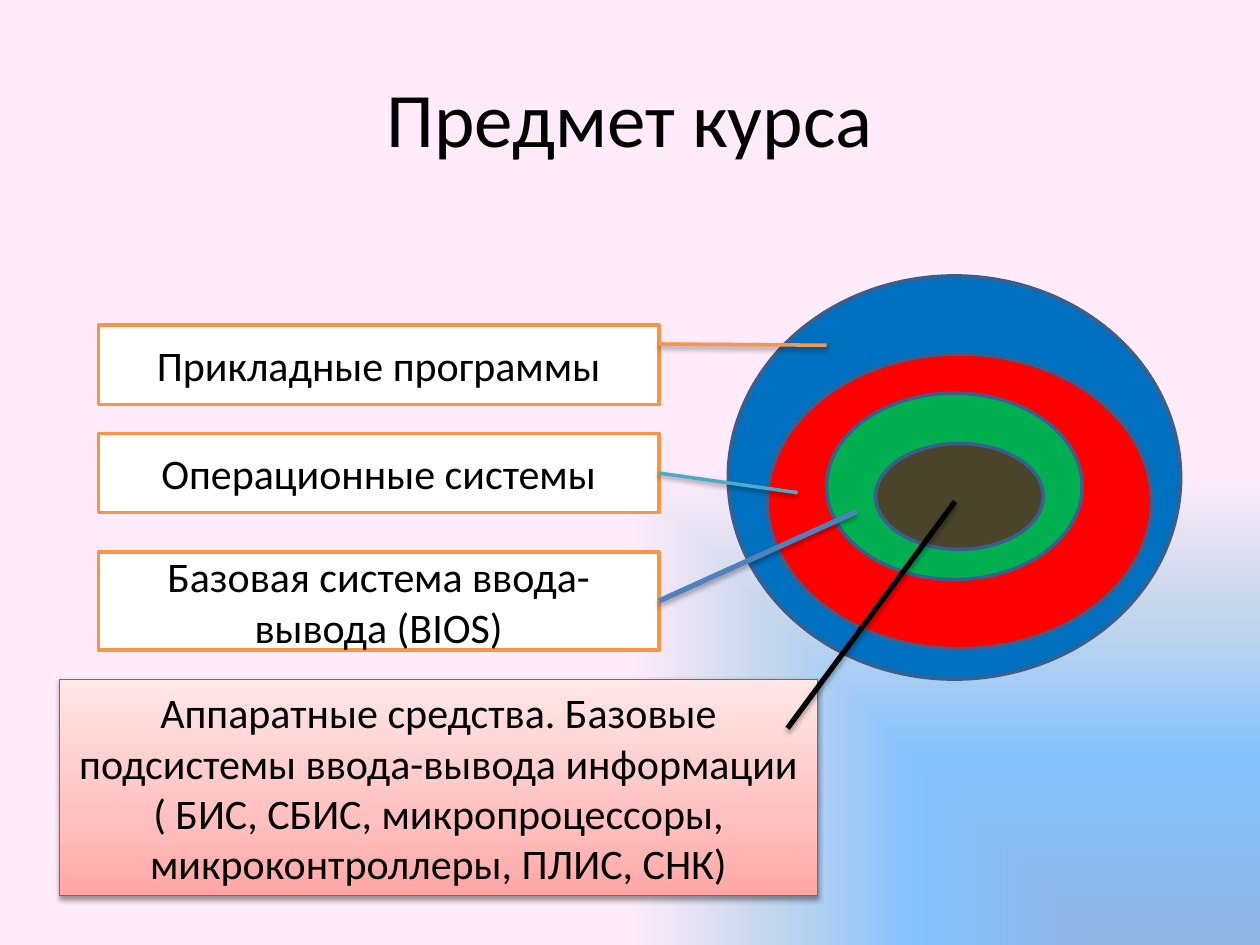
from lxml.etree import SubElement
from pptx import Presentation
from pptx.dml.color import RGBColor
from pptx.enum.shapes import MSO_CONNECTOR, MSO_SHAPE
from pptx.enum.text import MSO_ANCHOR, PP_ALIGN
from pptx.oxml.ns import qn
from pptx.util import Inches, Pt

COLORS = {
    "text": "000000", "white": "FFFFFF", "outline": "3A5F8C",
    "blue": "0070C0", "red": "FF0000", "green": "00B050", "brown": "4A452A",
    "orange": "F79646", "teal": "4BACC6", "steel": "4F81BD",
    "hardware": "BF4C48", "shadow": "000000",
}
BACKGROUND_STOPS = [(1, "8EB4E3", 34), (40, "85C2FF", 100),
                    (70, "C4D6EB", 100), (100, "FFEBFA", 100)]
HARDWARE_STOPS = [(0, "FFA6A5", 100), (35, "FFC0BF", 100), (100, "FFE7E7", 100)]


def rgb(name):
    return RGBColor.from_string(COLORS[name])


def add_color(parent, value, alpha):
    clr = SubElement(parent, qn("a:srgbClr"), val=value)
    if alpha < 100:
        SubElement(clr, qn("a:alpha"), val=str(alpha * 1000))


def set_gradient(fill, element, stops):
    fill.gradient()
    grad = element.find(".//" + qn("a:gradFill"))
    for child in list(grad):
        grad.remove(child)
    gs_list = SubElement(grad, qn("a:gsLst"))
    for pos, value, alpha in stops:
        gs = SubElement(gs_list, qn("a:gs"), pos=str(pos * 1000))
        add_color(gs, value, alpha)
    return grad


def add_shadow(effects, alpha, dist):
    shadow = SubElement(effects, qn("a:outerShdw"), blurRad=str(Pt(3.1)),
                        dist=str(Pt(dist)), dir="5400000", rotWithShape="0")
    add_color(shadow, COLORS["shadow"], alpha)


def add_text(sp, text, size):
    tf = sp.text_frame
    tf.word_wrap = True
    tf.vertical_anchor = MSO_ANCHOR.MIDDLE
    p = tf.paragraphs[0]
    p.alignment = PP_ALIGN.CENTER
    r = p.add_run()
    r.text = text
    r.font.name = "Calibri"
    r.font.size = Pt(size)
    r.font.color.rgb = rgb("text")


def add_shape(s, kind, box, fill, line, width=2):
    sp = s.shapes.add_shape(kind, *map(Inches, box))
    sp.shadow.inherit = False
    sp.fill.solid()
    sp.fill.fore_color.rgb = rgb(fill)
    sp.line.color.rgb = rgb(line)
    sp.line.width = Pt(width)
    return sp


def add_background(s):
    grad = set_gradient(s.background.fill, s.element, BACKGROUND_STOPS)
    path = SubElement(grad, qn("a:path"), path="rect")
    SubElement(path, qn("a:fillToRect"), l="100000", t="100000")


def add_title(s, box):
    add_text(s.shapes.add_textbox(*map(Inches, box)), "Предмет курса", 44)


def add_rings(s, box):
    left, top, width, height = box
    rings = [
        (0, 0, width, height, "blue"),
        (0.31, 0.62, 3.05, 2.34, "red"),
        (0.78, 0.93, 2.03, 1.48, "green"),
        (1.17, 1.33, 1.33, 0.84, "brown"),
    ]
    for dx, dy, w, h, fill in rings:
        add_shape(s, MSO_SHAPE.OVAL, (left + dx, top + dy, w, h), fill, "outline")


def add_layers(s, box):
    left, top, width, _ = box
    layers = [
        (0, 0.63, "Прикладные программы"),
        (0.86, 0.63, "Операционные системы"),
        (1.8, 0.78, "Базовая система ввода-вывода (BIOS)"),
    ]
    labels = []
    for dy, height, text in layers:
        sp = add_shape(s, MSO_SHAPE.RECTANGLE, (left, top + dy, width, height),
                       "white", "orange")
        add_text(sp, text, 24)
        labels.append(sp)
    return labels


def add_hardware(s, box):
    sp = add_shape(s, MSO_SHAPE.RECTANGLE, box, "white", "hardware", 0.75)
    grad = set_gradient(sp.fill, sp.element.spPr, HARDWARE_STOPS)
    SubElement(grad, qn("a:lin"), ang="16200000", scaled="1")
    add_shadow(sp.element.spPr.find(qn("a:effectLst")), 38, 1.6)
    add_text(sp, "Аппаратные средства. Базовые подсистемы ввода-вывода информации "
                 "( БИС, СБИС, микропроцессоры, микроконтроллеры, ПЛИС, СНК)", 24)


def add_pointers(s, labels):
    _, systems, bios = labels
    pointers = [
        (5.23, 2.73, 6.56, 2.74, "orange", 2, None),
        (5.23, 3.75, 6.33, 3.91, "teal", 2, systems),
        (5.23, 4.77, 6.8, 4.06, "steel", 3, bios),
        (6.25, 5.78, 7.58, 3.98, "text", 3, None),
    ]
    for x1, y1, x2, y2, color, width, label in pointers:
        cn = s.shapes.add_connector(MSO_CONNECTOR.STRAIGHT,
                                    *map(Inches, (x1, y1, x2, y2)))
        if label is not None:
            cn.begin_connect(label, 3)
        cn.line.color.rgb = rgb(color)
        cn.line.width = Pt(width)
        effects = SubElement(cn.element.spPr, qn("a:effectLst"))
        add_shadow(effects, *((38, 1.6) if width == 2 else (35, 1.8)))


def main():
    prs = Presentation()
    prs.slide_width, prs.slide_height = Inches(10), Inches(7.5)
    s = prs.slides.add_slide(prs.slide_layouts[6])
    add_background(s)
    add_title(s, (0.5, 0.3, 9, 1.25))
    add_rings(s, (5.78, 2.19, 3.59, 3.2))
    labels = add_layers(s, (0.78, 2.58, 4.45, 2.58))
    add_hardware(s, (0.47, 5.39, 6.02, 1.72))
    add_pointers(s, labels)
    prs.save("out.pptx")


if __name__ == "__main__":
    main()
